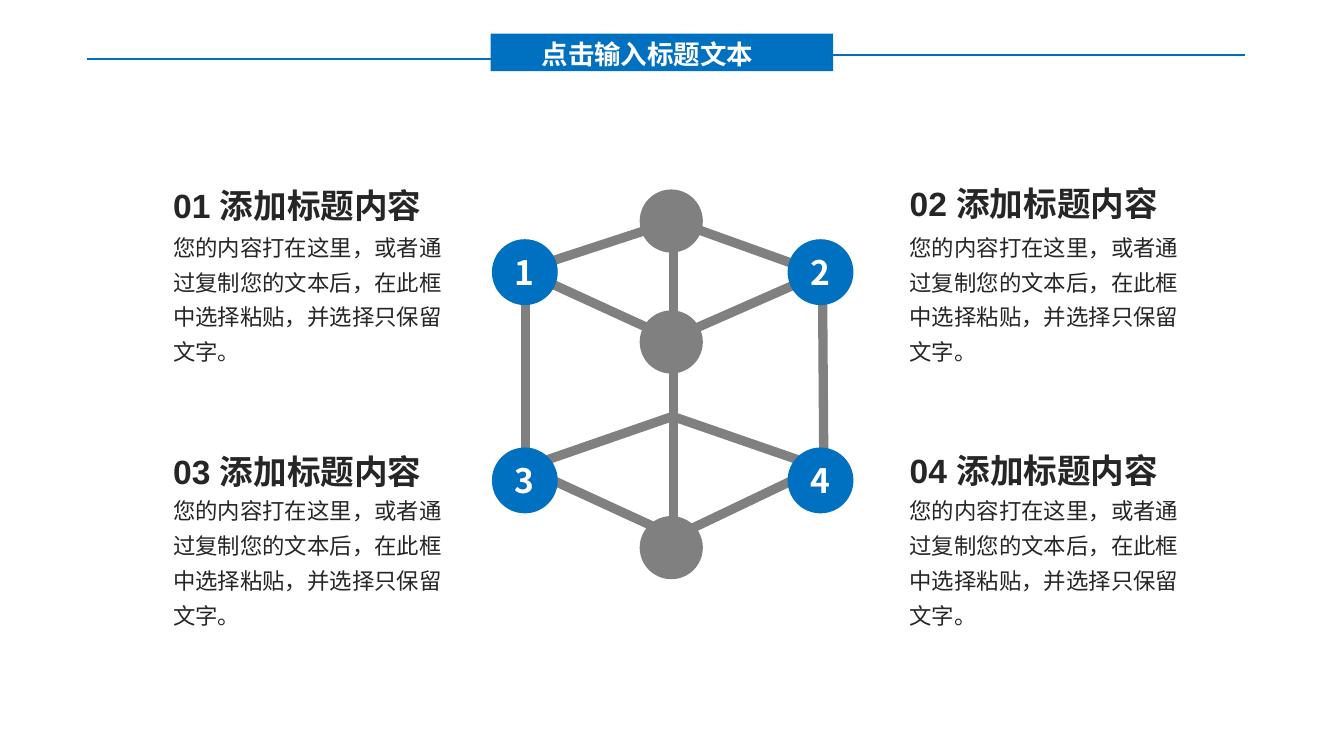
"""Build a slide with a cube of linked nodes and four captioned points."""
from lxml.etree import SubElement
from pptx import Presentation
from pptx.dml.color import RGBColor as RGB
from pptx.enum.shapes import MSO_CONNECTOR as CONN, MSO_SHAPE as SHAPE
from pptx.enum.text import MSO_ANCHOR as ANCHOR, MSO_AUTO_SIZE as FIT, PP_ALIGN as ALIGN
from pptx.oxml.ns import qn
from pptx.util import Pt

PX = 9144
COLORS = {"blue": "0070C0", "rule": "006EBC", "gray": "808080", "text": "262626", "white": "FFFFFF"}
CJK = "Noto Sans CJK SC"
BODY = "您的内容打在这里，或者通过复制您的文本后，在此框中选择粘贴，并选择只保留文字。"


def set_text(sp, text, size, color, bold=False, font=CJK, align=ALIGN.LEFT):
    tf = sp.text_frame
    tf.text = text
    p = tf.paragraphs[0]
    p.alignment = align
    r = p.runs[0]
    r.font.size, r.font.bold, r.font.name = Pt(size), bold, font
    r.font.color.rgb = RGB.from_string(COLORS[color])
    SubElement(r.font._element, qn("a:ea")).set("typeface", CJK)
    return p


def add_line(x1, y1, x2, y2, color, width):
    ln = s.shapes.add_connector(CONN.STRAIGHT, x1 * PX, y1 * PX, x2 * PX, y2 * PX)
    ln.line.color.rgb = RGB.from_string(COLORS[color])
    ln.line.width = Pt(width)
    SubElement(ln._element.spPr, qn("a:effectLst"))


prs = Presentation()
prs.slide_width = 1000 * PX
prs.slide_height = prs.slide_width * 9 // 16
s = prs.slides.add_slide(prs.slide_layouts[5])

edges = [
    (500, 165, 387, 202), (599, 353, 509, 396), (500, 310, 399, 345), (600, 208, 500, 252),
    (491, 394, 404, 354), (605, 346, 498, 309), (609, 203, 503, 165), (493, 249, 397, 205),
    (391, 208, 391, 351), (612, 208, 613, 351), (501, 175, 501, 397),
]
for edge in edges:
    add_line(*edge, "gray", 5)

nodes = [(366 + 220 * col, 178 + 155 * row, 49, "blue", str(2 * row + col + 1))
         for row in range(2) for col in range(2)]
nodes += [(476, y, 47, "gray", "") for y in (141, 231, 384)]
for x, y, size, color, number in nodes:
    sp = s.shapes.add_shape(SHAPE.OVAL, x * PX, y * PX, size * PX, size * PX)
    sp.shadow.inherit = False
    sp.fill.solid()
    sp.fill.fore_color.rgb = RGB.from_string(COLORS[color])
    sp.line.fill.background()
    if number:
        sp.text_frame.word_wrap = False
        sp.text_frame.vertical_anchor = ANCHOR.MIDDLE
        set_text(sp, number, 18, "white", True, align=ALIGN.CENTER)

points = [("01", 119, 133, 163, 220), ("02", 667, 131, 163, 220),
          ("03", 119, 331, 359, 231), ("04", 667, 330, 359, 232)]
for number, x, head_y, body_y, head_w in points:
    head = s.shapes.add_textbox(x * PX, head_y * PX, head_w * PX, 40 * PX)
    body = s.shapes.add_textbox(x * PX, body_y * PX, 220 * PX, 115 * PX)
    for sp in (head, body):
        sp.text_frame.word_wrap = True
        sp.text_frame.auto_size = FIT.SHAPE_TO_FIT_TEXT
    set_text(head, f"{number} 添加标题内容", 18, "text", True, "Arial")
    set_text(body, BODY, 12, "text").line_spacing = 1.3

banner = s.shapes.add_shape(SHAPE.RECTANGLE, 365 * PX, 25 * PX, 255 * PX, 28 * PX)
banner.shadow.inherit = False
banner.fill.solid()
banner.fill.fore_color.rgb = RGB.from_string(COLORS["blue"])
banner.line.fill.background()

title = s.shapes.title
title.left, title.top, title.width, title.height = 393 * PX, 23 * PX, 186 * PX, 34 * PX
title.text_frame.vertical_anchor = ANCHOR.TOP
title.text_frame.auto_size = FIT.SHAPE_TO_FIT_TEXT
set_text(title, "点击输入标题文本", 14.2, "white", True)
s.shapes._spTree.append(title._element)

for x, y in ((65, 44), (618, 41)):
    add_line(x, y, x + 308, y, "rule", 0.75)

prs.save("out.pptx")
